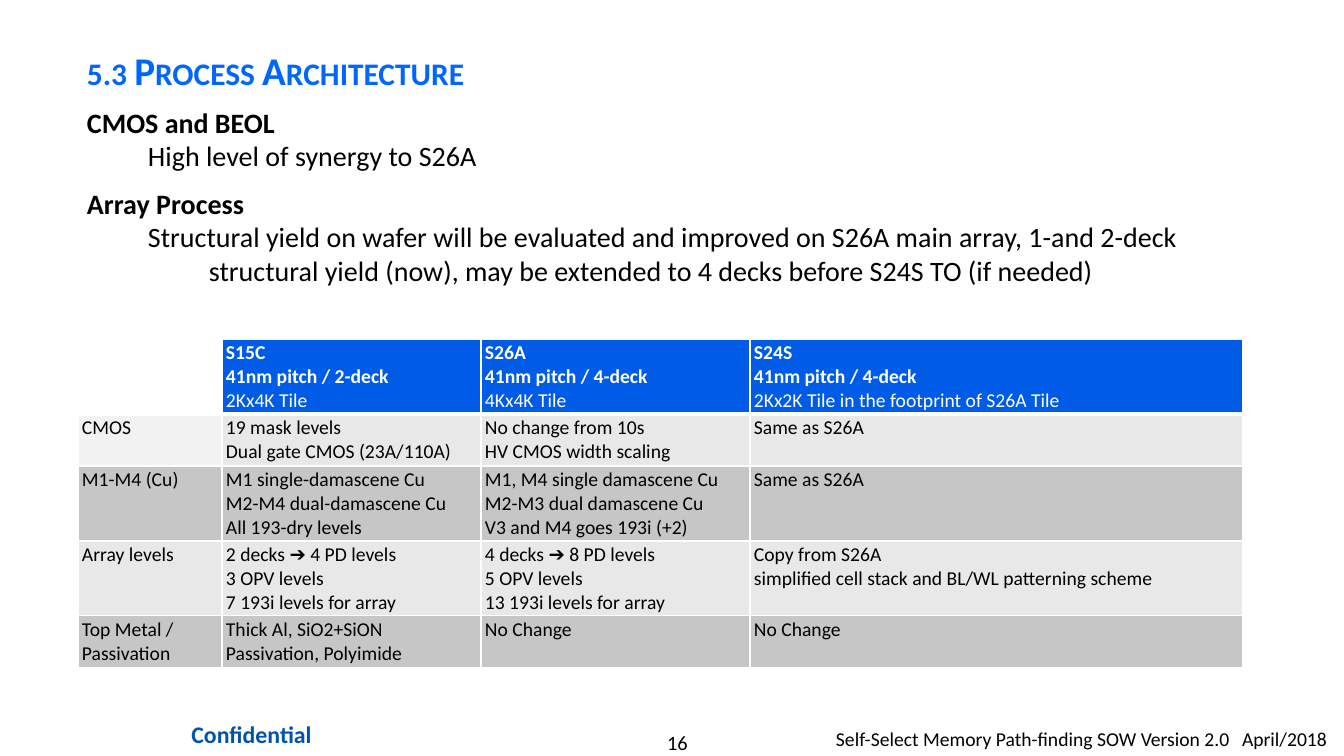
import dataclasses

import pptx
import pptx.dml.color
import pptx.enum.text
import pptx.oxml.ns
import pptx.util
from lxml import etree

EMU_PER_PX = 914400 / 100.8
ALIGN = pptx.enum.text.PP_ALIGN


def px(length):
    return pptx.util.Emu(round(length * EMU_PER_PX))


def add_xml(parent, tag, **attributes):
    return etree.SubElement(parent, pptx.oxml.ns.qn(tag), attributes)


@dataclasses.dataclass(frozen=True)
class Theme:
    font: str = "Calibri"
    black: str = "000000"
    white: str = "FFFFFF"
    title: str = "0066FF"
    confidential: str = "0054B0"
    header: str = "005CE7"
    corner_label: str = "F2F2F2"
    light: str = "E8E8E8"
    dark: str = "C6C6C6"
    title_size: float = 28
    body_size: float = 20
    confidential_size: float = 17
    number_size: float = 14.5
    small_size: float = 14


class SlideBuilder:
    def __init__(self, presentation, theme):
        self.theme = theme
        self.slide = presentation.slides.add_slide(presentation.slide_layouts[5])

    def format_paragraph(self, paragraph, size, color, bold=False):
        for run in paragraph.runs:
            run.font.name = self.theme.font
            run.font.size = pptx.util.Pt(size)
            run.font.bold = bold
            run.font.color.rgb = pptx.dml.color.RGBColor.from_string(color)

    def set_margins(self, target, horizontal, vertical):
        target.margin_left = target.margin_right = px(horizontal)
        target.margin_top = target.margin_bottom = px(vertical)

    def title(self, text, left, top, width, height):
        shape = self.slide.shapes.title
        shape.left, shape.top, shape.width, shape.height = map(px, (left, top, width, height))
        frame = shape.text_frame
        frame.text = text
        frame.auto_size = pptx.enum.text.MSO_AUTO_SIZE.NONE
        frame.vertical_anchor = pptx.enum.text.MSO_ANCHOR.MIDDLE
        self.set_margins(frame, 10, 5)
        paragraph = frame.paragraphs[0]
        paragraph.alignment = ALIGN.LEFT
        paragraph.line_spacing = 1.1
        self.format_paragraph(paragraph, self.theme.title_size, self.theme.title, True)
        for run in paragraph.runs:
            run.font._element.set("cap", "small")

    def text_box(self, left, top, width, height, margins):
        frame = self.slide.shapes.add_textbox(*map(px, (left, top, width, height))).text_frame
        frame.word_wrap = True
        self.set_margins(frame, *margins)
        return frame

    def label(self, text, bounds, margins, size, color, bold=False, align=ALIGN.LEFT, tab=None):
        frame = self.text_box(*bounds, margins)
        frame.text = text
        paragraph = frame.paragraphs[0]
        paragraph.alignment = align
        if tab:
            tabs = add_xml(paragraph._p.get_or_add_pPr(), "a:tabLst")
            add_xml(tabs, "a:tab", pos=str(px(tab)), algn="l")
        self.format_paragraph(paragraph, size, color, bold)

    def outline(self, sections, bounds, indent):
        frame = self.text_box(*bounds, (10, 5))
        frame.text = "\n".join(line for section in sections for line in section)
        for index, paragraph in enumerate(frame.paragraphs):
            is_heading = index % 2 == 0
            if is_heading and index:
                paragraph.space_before = pptx.util.Pt(10)
            if not is_heading:
                paragraph.level = 1
                properties = paragraph._p.get_or_add_pPr()
                properties.set("marL", str(px(2 * indent)))
                properties.set("indent", str(-px(indent)))
            self.format_paragraph(paragraph, self.theme.body_size, self.theme.black, is_heading)

    def cell_borders(self, cell, bottom_width):
        properties = cell._tc.get_or_add_tcPr()
        for side, width in (("L", 1), ("R", 1), ("T", 1), ("B", bottom_width)):
            line = add_xml(properties, f"a:ln{side}", w=str(pptx.util.Pt(width)))
            fill = add_xml(line, "a:solidFill")
            add_xml(fill, "a:srgbClr", val=self.theme.white)

    def cell_fill(self, row, column):
        if row == 0:
            return self.theme.header if column else self.theme.white
        if (row, column) == (1, 0):
            return self.theme.corner_label
        return self.theme.light if row % 2 else self.theme.dark

    def table(self, rows, left, top, widths, heights):
        table = self.slide.shapes.add_table(
            len(rows), len(widths), px(left), px(top), px(sum(widths)), px(sum(heights))
        ).table
        table.first_row = table.horz_banding = False
        for column, width in zip(table.columns, widths):
            column.width = px(width)
        for row, height in zip(table.rows, heights):
            row.height = px(height)
        for row_index, texts in enumerate(rows):
            is_header = row_index == 0
            color = self.theme.white if is_header else self.theme.black
            for column_index, text in enumerate(texts):
                cell = table.cell(row_index, column_index)
                cell.text = text
                self.set_margins(cell, 4, 2)
                self.cell_borders(cell, 3 if is_header else 1)
                cell.fill.solid()
                fill = self.cell_fill(row_index, column_index)
                cell.fill.fore_color.rgb = pptx.dml.color.RGBColor.from_string(fill)
                for line_index, paragraph in enumerate(cell.text_frame.paragraphs):
                    bold = is_header and line_index < 2
                    self.format_paragraph(paragraph, self.theme.small_size, color, bold)


SECTIONS = [
    ("CMOS and BEOL", "High level of synergy to S26A"),
    (
        "Array Process",
        "Structural yield on wafer will be evaluated and improved on S26A main array, "
        "1-and 2-deck structural yield (now), may be extended to 4 decks before S24S TO (if needed)",
    ),
]

PROCESS_ROWS = [
    (
        "",
        "S15C\n41nm pitch / 2-deck\n2Kx4K Tile",
        "S26A\n41nm pitch / 4-deck\n4Kx4K Tile",
        "S24S\n41nm pitch / 4-deck\n2Kx2K Tile in the footprint of S26A Tile",
    ),
    (
        "CMOS",
        "19 mask levels\nDual gate CMOS (23A/110A)",
        "No change from 10s\nHV CMOS width scaling",
        "Same as S26A",
    ),
    (
        "M1-M4 (Cu)",
        "M1 single-damascene Cu\nM2-M4 dual-damascene Cu\nAll 193-dry levels",
        "M1, M4 single damascene Cu\nM2-M3 dual damascene Cu\nV3 and M4 goes 193i (+2)",
        "Same as S26A",
    ),
    (
        "Array levels",
        "2 decks ➔ 4 PD levels\v3 OPV levels\v7 193i levels for array",
        "4 decks ➔ 8 PD levels\v5 OPV levels\v13 193i levels for array",
        "Copy from S26A\nsimplified cell stack and BL/WL patterning scheme",
    ),
    (
        "Top Metal /\nPassivation",
        "Thick Al, SiO2+SiON Passivation, Polyimide",
        "No Change",
        "No Change",
    ),
]


def main():
    presentation = pptx.Presentation()
    presentation.slide_width, presentation.slide_height = px(1344), px(756)
    theme = Theme()
    builder = SlideBuilder(presentation, theme)
    builder.label("16", (560, 730, 235, 24), (0, 0), theme.number_size, theme.black, align=ALIGN.CENTER)
    builder.label("Confidential", (156, 714, 191, 41), (12, 6), theme.confidential_size,
                  theme.confidential, bold=True, align=ALIGN.CENTER)
    builder.label("Self-Select Memory Path-finding SOW Version 2.0\tApril/2018", (836, 722, 508, 34),
                  (0, 5), theme.small_size, theme.black, tab=406)
    builder.title("5.3 Process Architecture", 77, 21, 1115, 93)
    builder.outline(SECTIONS, (77, 100, 1203, 233), indent=61)
    builder.table(PROCESS_ROWS, 78, 339, (144, 259, 269, 493), (75, 52, 75, 75, 52))
    presentation.save("out.pptx")


if __name__ == "__main__":
    main()
